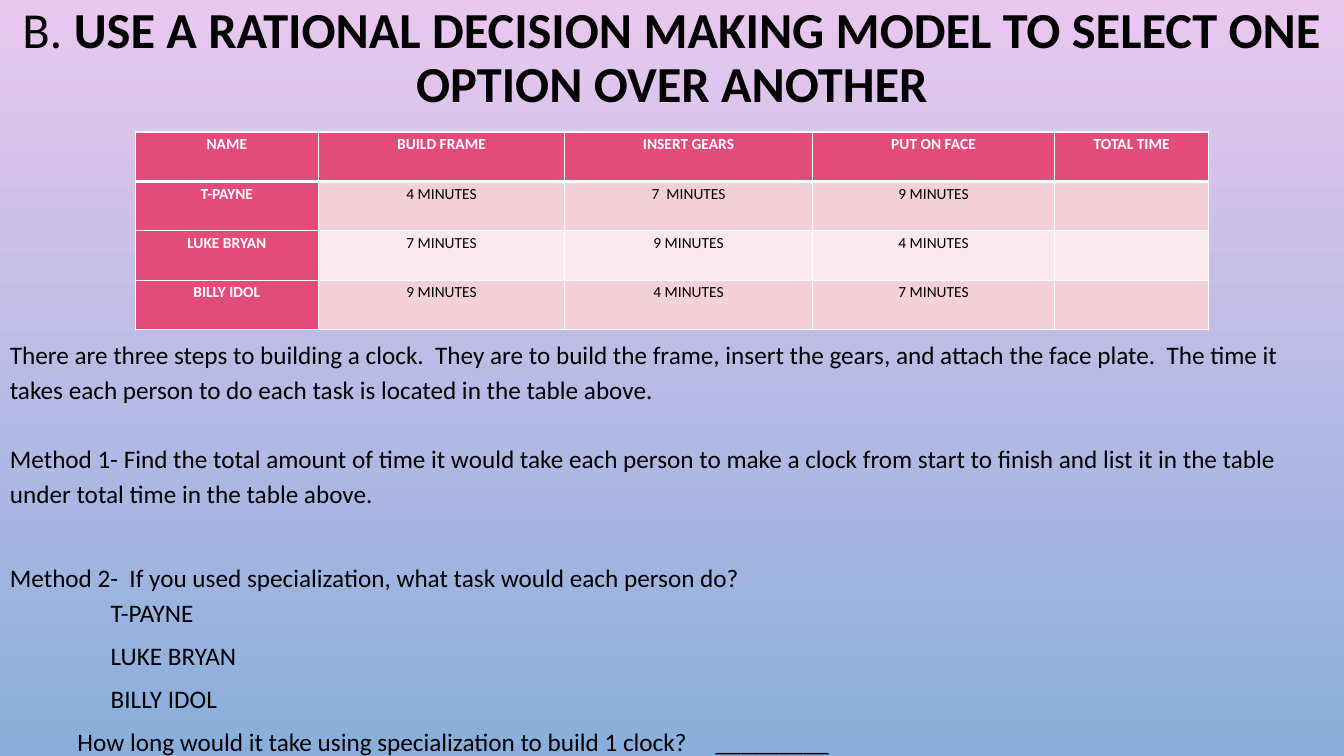
import pptx
import pptx.util
import pptx.dml.color
import pptx.enum.text
import pptx.oxml.ns
import lxml.etree
from dataclasses import dataclass

Inches = pptx.util.Inches
Pt = pptx.util.Pt
CENTER = pptx.enum.text.PP_ALIGN.CENTER


@dataclass(frozen=True)
class Theme:
    """Colours, font and type sizes of the slide."""
    sky: str = "E9C8EF"
    sea: str = "89AEDB"
    ink: str = "000000"
    white: str = "FFFFFF"
    rose: str = "E34B7A"
    pink: str = "F4D0D7"
    pale: str = "FAE9EC"
    font: str = "Calibri"
    title: int = 36
    body: int = 18
    cell: int = 11


THEME = Theme()

ROWS = [
    ["NAME", "BUILD FRAME", "INSERT GEARS", "PUT ON FACE", "TOTAL TIME"],
    ["T-PAYNE", "4 MINUTES", "7  MINUTES", "9 MINUTES", ""],
    ["LUKE BRYAN", "7 MINUTES", "9 MINUTES", "4 MINUTES", ""],
    ["BILLY IDOL", "9 MINUTES", "4 MINUTES", "7 MINUTES", ""],
]
WIDTHS = [1.82, 2.44, 2.46, 2.4, 1.53]

INTRO = ("There are three steps to building a clock.  They are to build the frame, "
         "insert the gears, and attach the face plate.  The time it takes each person "
         "to do each task is located in the table above.")
FIRST = ("Method 1- Find the total amount of time it would take each person to make a "
         "clock from start to finish and list it in the table under total time in the "
         "table above.")
SECOND = "Method 2-  If you used specialization, what task would each person do?"
ASK = "How long would it take using specialization to build 1 clock?\t_________"


def color(code):
    """Turn a hex code into a colour."""
    return pptx.dml.color.RGBColor.from_string(code)


def add_node(parent, tag, **attrs):
    """Append a drawing element with the given attributes."""
    node = lxml.etree.SubElement(parent, pptx.oxml.ns.qn(tag))
    for key, value in attrs.items():
        node.set(key, str(value))
    return node


def set_font(para, size, code, bold=None):
    """Set the font of a whole paragraph."""
    font = para.font
    font.name, font.size, font.bold = THEME.font, Pt(size), bold
    font.color.rgb = color(code)


def paint_back(slide):
    """Fill the background from top to bottom."""
    fill = slide.background.fill
    fill.gradient()
    fill.gradient_angle = 270
    for stop, code in zip(fill.gradient_stops, (THEME.sky, THEME.sea)):
        stop.color.rgb = color(code)


def add_box(slide, left, top, width, height):
    """Add a wrapping text box and return its frame."""
    box = slide.shapes.add_textbox(Inches(left), Inches(top), Inches(width), Inches(height))
    box.text_frame.word_wrap = True
    return box.text_frame


def add_title(slide):
    """Add the centred heading."""
    para = add_box(slide, 0, 0, 13.33, 1.75).paragraphs[0]
    para.alignment, para.line_spacing = CENTER, 0.9
    set_font(para, THEME.title, THEME.ink)
    para.add_run().text = "B. "
    run = para.add_run()
    run.text = "USE A RATIONAL DECISION MAKING MODEL TO SELECT ONE OPTION OVER ANOTHER"
    run.font.bold = True


def set_edges(cell, base):
    """Draw white borders, with a chosen width below."""
    props = cell._tc.get_or_add_tcPr()
    for spot, side in enumerate(("a:lnL", "a:lnR", "a:lnT", "a:lnB")):
        width = base if side == "a:lnB" else 1
        line = lxml.etree.Element(pptx.oxml.ns.qn(side), w=str(Pt(width)))
        add_node(add_node(line, "a:solidFill"), "a:srgbClr", val=THEME.white)
        props.insert(spot, line)


def fill_cell(cell, text, row, col):
    """Write and style one table cell."""
    head = row == 0 or col == 0
    band = THEME.pink if row % 2 else THEME.pale
    cell.margin_left = cell.margin_right = Inches(0.07)
    cell.margin_top = cell.margin_bottom = 0
    cell.fill.solid()
    cell.fill.fore_color.rgb = color(THEME.rose if head else band)
    cell.text = text
    para = cell.text_frame.paragraphs[0]
    para.alignment, para.line_spacing = CENTER, 1.15
    set_font(para, THEME.cell, THEME.white if head else THEME.ink, head)
    set_edges(cell, 1 if row else 3)


def add_times(slide):
    """Add the table of task times."""
    table = slide.shapes.add_table(len(ROWS), len(WIDTHS), Inches(1.34), Inches(1.31),
                                   Inches(sum(WIDTHS)), Inches(1.96)).table
    for column, width in zip(table.columns, WIDTHS):
        column.width = Inches(width)
    for row, texts in enumerate(ROWS):
        table.rows[row].height = Inches(0.49)
        for col, text in enumerate(texts):
            fill_cell(table.cell(row, col), text, row, col)


def add_para(frame, text, before=0, after=0, indent=0, tab=None):
    """Add a body paragraph, with an indent and a tab stop if given."""
    para = frame.paragraphs[0] if not frame.text else frame.add_paragraph()
    para.text = text
    para.line_spacing = 1.15
    para.space_before, para.space_after = Pt(before), Pt(after)
    props = para._p.get_or_add_pPr()
    props.set("marL", "0")
    props.set("indent", str(Inches(indent)))
    if tab:
        add_node(add_node(props, "a:tabLst"), "a:tab", pos=Inches(tab), algn="l")
    set_font(para, THEME.body, THEME.ink)


def add_body(slide):
    """Add the instructions below the table."""
    frame = add_box(slide, 0, 3.27, 12.9, 4.23)
    add_para(frame, INTRO)
    add_para(frame, FIRST, before=25)
    add_para(frame, SECOND, before=35)
    for name, *_ in ROWS[1:]:
        add_para(frame, name, after=6, indent=1)
    add_para(frame, ASK, indent=0.67, tab=6.88)


def main():
    """Build and save the slide."""
    deck = pptx.Presentation()
    deck.slide_width, deck.slide_height = Inches(13.33), Inches(7.5)
    slide = deck.slides.add_slide(deck.slide_layouts[6])
    paint_back(slide)
    add_title(slide)
    add_times(slide)
    add_body(slide)
    deck.save("out.pptx")


if __name__ == "__main__":
    main()
